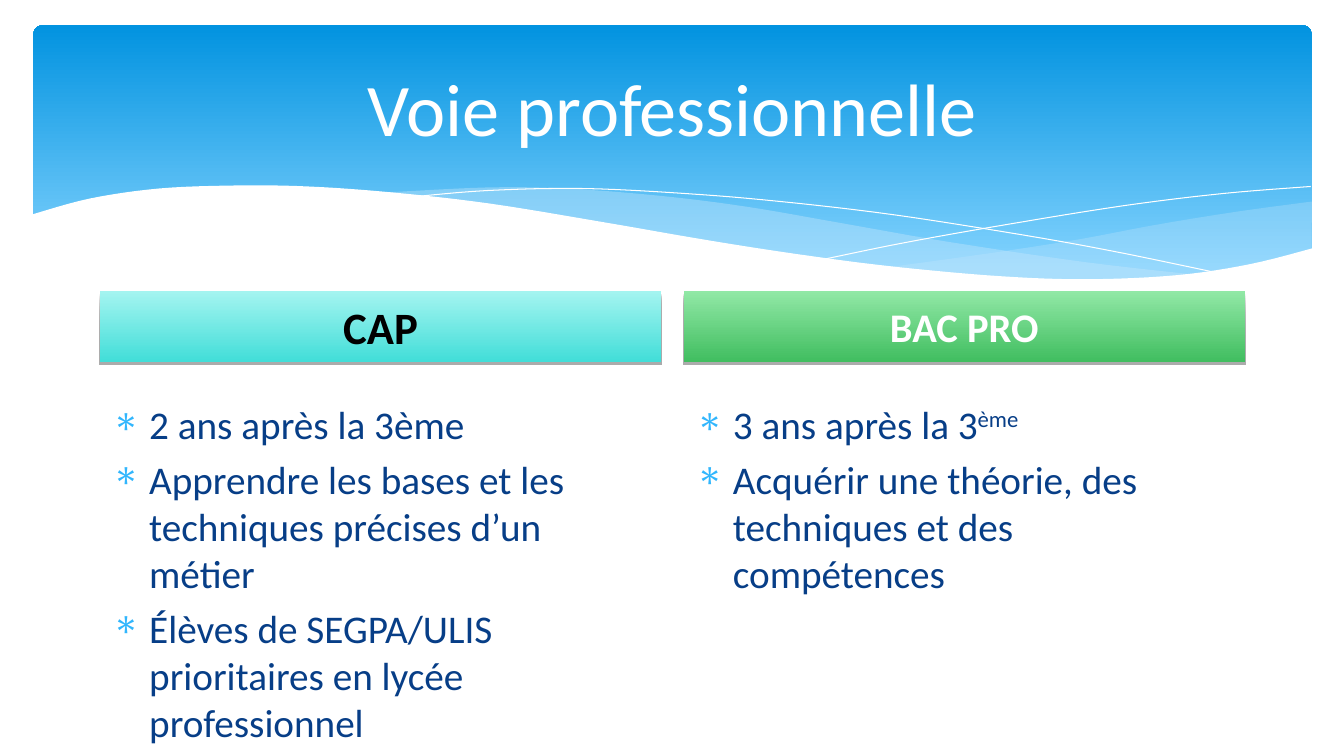
from lxml import etree
from pptx import Presentation, util as u
from pptx.dml.color import RGBColor
from pptx.enum import shapes, text
from pptx.oxml import ns

# Content
TITLE = "Voie professionnelle"
COLUMNS = [
    {"heading": "CAP", "size": 32, "ink": "black", "band": ("aqua_light", "aqua"),
     "items": [["2 ans après la 3ème"],
               ["Apprendre les bases et les techniques précises d’un métier"],
               ["Élèves de SEGPA/ULIS prioritaires en lycée professionnel"]]},
    {"heading": "BAC PRO", "size": 29, "ink": "white", "band": ("green_light", "green"),
     "items": [["3 ans après la 3", "ème"],
               ["Acquérir une théorie, des techniques et des compétences"]]},
]
COLORS = {"white": "FFFFFF", "black": "000000", "navy": "073E87", "bullet": "31B6FD",
          "sky_light": "83D3FE", "sky": "0293E0", "mist": "C6E7FC",
          "aqua_light": "A4F4F0", "aqua": "42DED8",
          "green_light": "91E8A6", "green": "41BE60"}
FONT = "Calibri"

# Waves: each outline is a chain of curves, given by the points they pass through
RIGHT_WAVE = [
    [(13.01, 2), (12.27, 2.1), (11.47, 2.23), (10.73, 2.37), (10.04, 2.48),
     (9.41, 2.57), (8.82, 2.65)],
    [(8.82, 2.65), (9.4, 2.71), (10.09, 2.76), (10.85, 2.78), (11.62, 2.74),
     (12.37, 2.63), (13.01, 2.47)],
]
MIDDLE_WAVE = [
    [(11.9, 2.73), (10.76, 2.6), (9.41, 2.4), (8.38, 2.22), (7.4, 2.05), (6.52, 1.94),
     (5.6, 1.87), (4.82, 1.86), (3.82, 1.91)],
    [(3.82, 1.91), (4.83, 2.03), (5.99, 2.22), (7.06, 2.4), (8.02, 2.55), (9.07, 2.68),
     (9.98, 2.76), (10.9, 2.78), (11.9, 2.73)],
]
FALLING_LINE = [[(4.12, 1.95), (4.84, 1.89), (5.77, 1.87), (6.8, 1.92), (7.75, 2),
                 (8.86, 2.13), (10.14, 2.33), (11.08, 2.5), (12.09, 2.71)]]
RISING_LINE = [[(8.18, 2.57), (8.96, 2.41), (9.97, 2.23), (11.15, 2.04),
                (12.13, 1.92), (13, 1.85)]]
WHITE_WAVE = [
    [(13.03, 2.46), (12.4, 2.62), (11.67, 2.73), (10.78, 2.77), (9.92, 2.74),
     (8.91, 2.65), (8.04, 2.54), (7.06, 2.39), (5.96, 2.2), (4.86, 2.02), (3.9, 1.91),
     (3.06, 1.85), (2.35, 1.84), (1.58, 1.87), (0.89, 1.97), (0.31, 2.13)],
    [(0.31, 2.13), (0.31, 3.29)],
    [(0.31, 3.29), (13.03, 3.29)],
]

# Grid, in inches
WIDTH, HEIGHT = 13.33, 7.5
COLUMN_LEFT, COLUMN_WIDTH, COLUMN_STEP = 0.99, 5.57, 5.79
HEADING_TOP, HEADING_HEIGHT, LIST_TOP = 2.89, 0.7, 3.91
INDENT = u.Inches(0.37)


def color(name):
    return RGBColor.from_string(COLORS[name])


def add_xml(parent, tag, **attributes):
    return etree.SubElement(parent, ns.qn(tag), attributes)


def fill_gradient(shape, names, angle, first=0):
    shape.fill.gradient()
    shape.fill.gradient_angle = angle
    for stop, name, position in zip(shape.fill.gradient_stops, names, (first, 1)):
        stop.color.rgb = color(name)
        stop.position = position


def smooth(points, steps=6):
    """Sample a Catmull-Rom spline through the points."""
    padded = [points[0], *points, points[-1]]
    sampled = [points[0]]
    for a, b, c, d in zip(padded, padded[1:], padded[2:], padded[3:]):
        for step in range(1, steps + 1):
            t = step / steps
            sampled.append(tuple(
                (2 * q + (r - p) * t + (2 * p - 5 * q + 4 * r - s) * t ** 2
                 + (3 * q - p - 3 * r + s) * t ** 3) / 2
                for p, q, r, s in zip(a, b, c, d)))
    return sampled


def add_wave(slide, curves, fill=None, alpha=100):
    # The builder rounds its coordinates, so it is given whole EMU
    points = [(u.Inches(x), u.Inches(y)) for curve in curves for x, y in smooth(curve)]
    builder = slide.shapes.build_freeform(*points[0], scale=1.0)
    builder.add_line_segments(points[1:], close=fill is not None)
    wave = builder.convert_to_shape()
    wave.shadow.inherit = False
    if fill is None:
        wave.fill.background()
        wave.line.color.rgb = color("white")
        wave.line.width = u.Pt(0.75)
        return
    wave.line.fill.background()
    wave.fill.solid()
    wave.fill.fore_color.rgb = color(fill)
    if alpha < 100:
        tint = wave.element.spPr.find(ns.qn("a:solidFill"))[0]
        add_xml(tint, "a:alpha", val=str(alpha * 1000))


def set_frame(shape, anchor):
    frame = shape.text_frame
    frame.word_wrap = True
    frame.auto_size = text.MSO_AUTO_SIZE.NONE
    frame.vertical_anchor = anchor
    frame.margin_left = frame.margin_right = u.Inches(0.12)
    frame.margin_top = frame.margin_bottom = u.Inches(0.06)
    return frame


def set_font(paragraph, size, ink, bold=False):
    font = paragraph.font
    font.name, font.size, font.bold = FONT, u.Pt(size), bold
    font.color.rgb = color(ink)


def add_banner(slide):
    banner = slide.shapes.add_shape(
        shapes.MSO_SHAPE.ROUNDED_RECTANGLE,
        *map(u.Inches, (0.33, 0.25, 12.68, 2.7)))
    banner.adjustments[0] = 0.034
    banner.shadow.inherit = False
    banner.line.fill.background()
    fill_gradient(banner, ("sky_light", "sky"), 90, first=0.1)
    add_wave(slide, RIGHT_WAVE, "mist", 29)
    add_wave(slide, MIDDLE_WAVE, "mist", 40)
    add_wave(slide, FALLING_LINE)
    add_wave(slide, RISING_LINE)
    add_wave(slide, WHITE_WAVE, "white")


def add_title(slide):
    title = slide.shapes.title
    title.left, title.top, title.width, title.height = map(
        u.Inches, (0.67, 0.37, 12, 1.37))
    slide.shapes.element.append(title.element)  # in front of the banner
    frame = set_frame(title, text.MSO_ANCHOR.MIDDLE)
    frame.text = TITLE
    frame.paragraphs[0].alignment = text.PP_ALIGN.CENTER
    set_font(frame.paragraphs[0], 53, "white")


def add_heading(slide, column, left):
    band = slide.shapes.add_shape(
        shapes.MSO_SHAPE.RECTANGLE,
        *map(u.Inches, (left, HEADING_TOP, COLUMN_WIDTH, HEADING_HEIGHT)))
    band.line.fill.background()
    fill_gradient(band, column["band"], 270)
    band.shadow.inherit = False
    shadow = add_xml(band.element.spPr.find(ns.qn("a:effectLst")), "a:outerShdw",
                     blurRad="0", dist=str(u.Pt(2.2)), dir="5400000", rotWithShape="0")
    shade = add_xml(shadow, "a:srgbClr", val=COLORS["black"])
    add_xml(shade, "a:alpha", val="32000")
    frame = set_frame(band, text.MSO_ANCHOR.MIDDLE)
    frame.text = column["heading"]
    paragraph = frame.paragraphs[0]
    paragraph.alignment = text.PP_ALIGN.CENTER
    paragraph.space_before = u.Pt(column["size"] / 5)
    set_font(paragraph, column["size"], column["ink"], bold=True)


def add_list(slide, items, left):
    box = slide.shapes.add_textbox(
        *map(u.Inches, (left, LIST_TOP, COLUMN_WIDTH, HEIGHT - LIST_TOP)))
    frame = set_frame(box, text.MSO_ANCHOR.TOP)
    for index, (main, *superscript) in enumerate(items):
        paragraph = frame.add_paragraph() if index else frame.paragraphs[0]
        paragraph.add_run().text = main
        for raised in superscript:
            run = paragraph.add_run()
            run.text = raised
            run.font._element.set("baseline", "30000")
        paragraph.space_before = u.Pt(5.6)
        properties = paragraph._p.get_or_add_pPr()
        properties.set("marL", str(INDENT))
        properties.set("indent", str(-INDENT))
        add_xml(add_xml(properties, "a:buClr"), "a:srgbClr", val=COLORS["bullet"])
        add_xml(properties, "a:buChar", char="∗")
        set_font(paragraph, 28, "navy")


def main():
    presentation = Presentation()
    presentation.slide_width = u.Inches(WIDTH)
    presentation.slide_height = u.Inches(HEIGHT)
    slide = presentation.slides.add_slide(presentation.slide_layouts[5])
    add_banner(slide)
    add_title(slide)
    for index, column in enumerate(COLUMNS):
        left = COLUMN_LEFT + index * COLUMN_STEP
        add_heading(slide, column, left)
        add_list(slide, column["items"], left)
    presentation.save("out.pptx")


if __name__ == "__main__":
    main()
